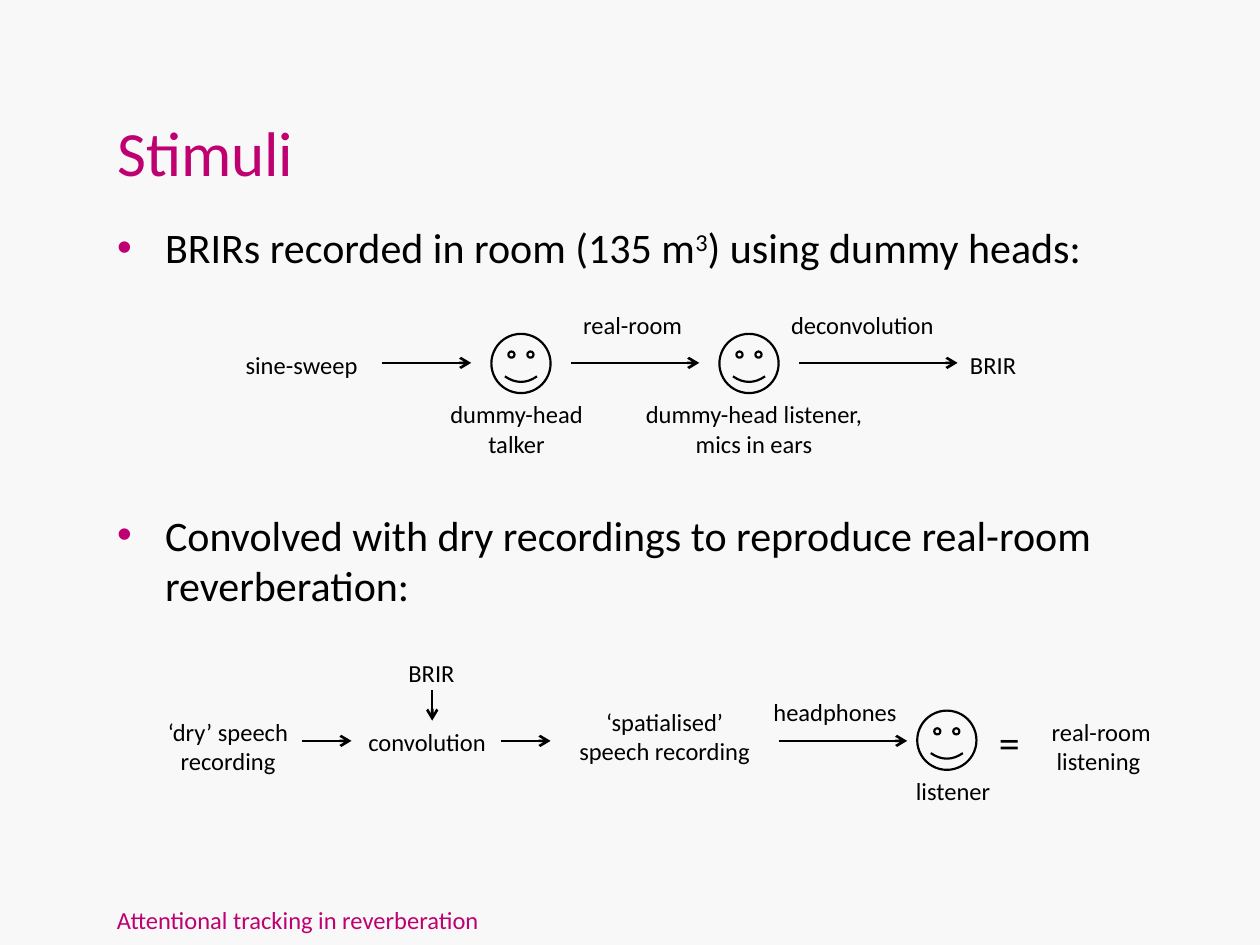
import pptx
import pptx.util
import pptx.dml.color
import pptx.enum.text
import pptx.enum.shapes
import pptx.oxml
import pptx.oxml.ns
from lxml import etree

Inches = pptx.util.Inches
ALIGN = pptx.enum.text.PP_ALIGN
FIT = pptx.enum.text.MSO_AUTO_SIZE
PINK = "BF0071"
BLACK = "000000"
HEAD = 0.47


def color(code):
    """Turn a hex string into a colour."""
    return pptx.dml.color.RGBColor.from_string(code)


def add_xml(parent, tag, **attrs):
    """Append a drawing element and return it."""
    return etree.SubElement(parent, pptx.oxml.ns.qn(tag), attrs)


def style(par, size, code=BLACK, align=ALIGN.LEFT):
    """Set the font and alignment of a paragraph."""
    par.alignment = align
    par.font.name = "Calibri"
    par.font.size = pptx.util.Pt(size)
    par.font.color.rgb = color(code)


def place(shape, left, top, width, height):
    """Move and size a shape."""
    shape.left, shape.top = Inches(left), Inches(top)
    shape.width, shape.height = Inches(width), Inches(height)


def add_label(shapes, text, left, top, width, height=0.34, size=14,
              code=BLACK, align=ALIGN.CENTER):
    """Add a wrapped text box."""
    box = shapes.add_textbox(*map(Inches, (left, top, width, height)))
    frame = box.text_frame
    frame.word_wrap = True
    frame.auto_size = FIT.SHAPE_TO_FIT_TEXT
    frame.text = text
    style(frame.paragraphs[0], size, code, align)


def add_arrow(shapes, x1, y1, x2, y2):
    """Add a black line with an open arrowhead at its end."""
    line = shapes.add_connector(pptx.enum.shapes.MSO_CONNECTOR.STRAIGHT,
                                *map(Inches, (x1, y1, x2, y2)))
    line.line.color.rgb = color(BLACK)
    line.line.width = pptx.util.Pt(1.5)
    add_xml(line.line._get_or_add_ln(), "a:tailEnd", type="arrow")
    add_xml(line._element.spPr, "a:effectLst")


def add_face(shapes, left, top):
    """Add an outlined smiley face."""
    face = shapes.add_shape(pptx.enum.shapes.MSO_SHAPE.SMILEY_FACE,
                            *map(Inches, (left, top, HEAD, HEAD)))
    face.shadow.inherit = False
    face.fill.background()
    face.line.color.rgb = color(BLACK)
    face.line.width = pptx.util.Pt(1.25)


def set_title(shape, text):
    """Fill and format the title."""
    place(shape, 0.83, 0.3, 6.77, 1.25)
    frame = shape.text_frame
    frame.text = text
    frame.word_wrap = False
    frame.auto_size = FIT.NONE
    frame.vertical_anchor = pptx.enum.text.MSO_ANCHOR.BOTTOM
    style(frame.paragraphs[0], 36, PINK)


def set_bullet(shape, parts, top, height, space=1.0):
    """Fill a body with one bullet, raising every second part."""
    place(shape, 0.83, top, 8.43, height)
    frame = shape.text_frame
    frame.word_wrap = True
    frame.auto_size = FIT.NONE
    par = frame.paragraphs[0]
    for i, part in enumerate(parts):
        run = par.add_run()
        run.text = part
        if i % 2:
            run._r.get_or_add_rPr().set("baseline", "30000")
    par.line_spacing = space
    par.space_before = pptx.util.Pt(0)
    props = par._p.get_or_add_pPr()
    props.set("marL", str(Inches(0.38)))
    props.set("indent", str(Inches(-0.38)))
    add_xml(add_xml(props, "a:buClr"), "a:srgbClr", val=PINK)
    add_xml(props, "a:buFont", typeface="Arial")
    add_xml(props, "a:buChar", char="•")
    style(par, 24)


def add_record(shapes):
    """Draw the recording chain."""
    mid = 2.88
    for x1, x2 in ((3.03, 3.74), (4.53, 5.55), (6.34, 7.6)):
        add_arrow(shapes, x1, mid, x2, mid)
    for left in (3.9, 5.71):
        add_face(shapes, left, 2.65)
    for text, left, top, width in (
            ("sine-sweep", 1.85, 2.73, 1.18),
            ("real-room", 4.53, 2.41, 1.1),
            ("deconvolution", 6.18, 2.41, 1.5),
            ("BRIR", 7.6, 2.73, 0.63)):
        add_label(shapes, text, left, top, width, align=ALIGN.LEFT)
    add_label(shapes, "dummy-head talker", 3.43, 3.12, 1.34, 0.57)
    add_label(shapes, "dummy-head listener, mics in ears",
              5, 3.12, 1.97, 0.57)


def add_replay(shapes):
    """Draw the convolution chain."""
    mid = 5.88
    for x1, x2 in ((2.4, 2.79), (3.98, 4.37), (6.18, 7.2)):
        add_arrow(shapes, x1, mid, x2, mid)
    add_arrow(shapes, 3.43, 5.48, 3.43, 5.72)
    add_face(shapes, 7.28, 5.64)
    for text, left, top, width, height in (
            ("‘dry’ speech recording", 1.22, 5.64, 1.18, 0.57),
            ("BRIR", 3.11, 5.17, 0.63, 0.34),
            ("convolution", 2.72, 5.72, 1.34, 0.34),
            ("‘spatialised’ speech recording", 4.45, 5.56, 1.65, 0.57),
            ("headphones ", 6.02, 5.48, 1.26, 0.34),
            ("listener", 7.13, 6.11, 0.87, 0.34),
            ("real-room listening ", 8.07, 5.64, 1.34, 0.57)):
        add_label(shapes, text, left, top, width, height)
    add_label(shapes, "=", 7.83, 5.64, 0.39, 0.5, 24, align=ALIGN.LEFT)


def main():
    """Build and save the slide."""
    deck = pptx.Presentation()
    deck.slide_width, deck.slide_height = Inches(10), Inches(7.5)
    slide = deck.slides.add_slide(deck.slide_layouts[3])
    slide.background.fill.solid()
    slide.background.fill.fore_color.rgb = color("F8F8F8")
    title, first, second = slide.placeholders
    set_title(title, "Stimuli")
    set_bullet(first, ("BRIRs recorded in room (135 m", "3",
                       ") using dummy heads:"), 1.67, 0.58, 1.1)
    set_bullet(second, ("Convolved with dry recordings to reproduce "
                        "real-room reverberation:",), 3.99, 0.98)
    add_record(slide.shapes.add_group_shape().shapes)
    add_replay(slide.shapes.add_group_shape().shapes)
    add_label(slide.shapes, "Attentional tracking in reverberation",
              0.83, 7.13, 6.93, code=PINK, align=ALIGN.LEFT)
    deck.save("out.pptx")


if __name__ == "__main__":
    main()
